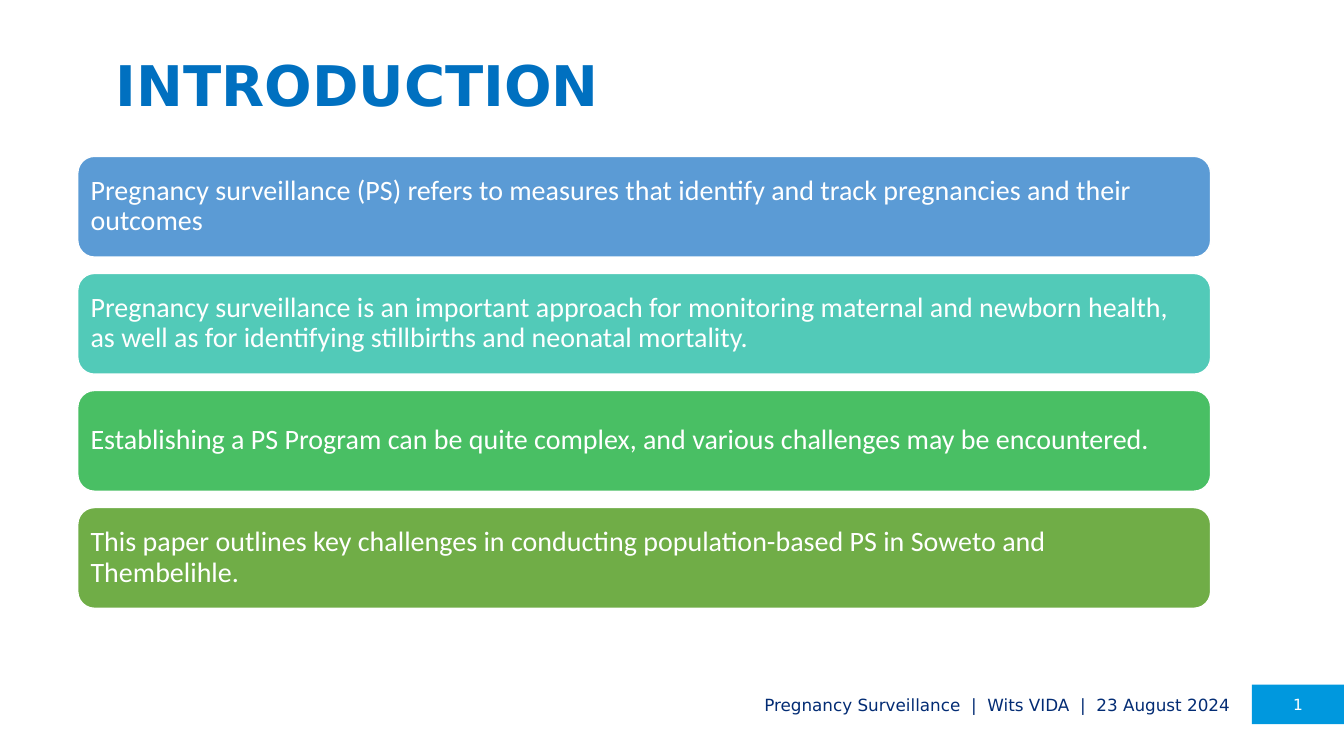
from pptx import Presentation
from pptx.dml.color import RGBColor
from pptx.enum.shapes import MSO_SHAPE
from pptx.enum.text import MSO_ANCHOR, PP_ALIGN
from pptx.util import Cm, Pt

COLORS = {
    "title": "0070C0",
    "footer": "032C74",
    "number": "0098DE",
    "white": "FFFFFF",
    "blue": "5B9BD5",
    "teal": "52CAB8",
    "green": "49BF64",
    "olive": "70AD47",
}

CARDS = [
    ("blue", "Pregnancy surveillance (PS) refers to measures that identify and track "
             "pregnancies and their outcomes"),
    ("teal", "Pregnancy surveillance is an important approach for monitoring maternal and "
             "newborn health, as well as for identifying stillbirths and neonatal mortality."),
    ("green", "Establishing a PS Program can be quite complex, and various challenges may "
              "be encountered."),
    ("olive", "This paper outlines key challenges in conducting population-based PS in "
              "Soweto and Thembelihle."),
]
CARD_TOP = 3.94
CARD_PITCH = 2.95


def rgb(name):
    return RGBColor.from_string(COLORS[name])


def write_text(shape, text, size, color, font="DejaVu Sans", align=PP_ALIGN.LEFT,
               anchor=MSO_ANCHOR.MIDDLE, inset=0, bold=False, line_spacing=1.0):
    frame = shape.text_frame
    frame.word_wrap = True
    frame.vertical_anchor = anchor
    frame.margin_left = frame.margin_right = Cm(inset)
    frame.margin_top = frame.margin_bottom = Cm(inset)
    paragraph = frame.paragraphs[0]
    paragraph.text = text
    paragraph.alignment = align
    paragraph.line_spacing = line_spacing
    paragraph.font.name = font
    paragraph.font.size = Pt(size)
    paragraph.font.bold = bold
    paragraph.font.color.rgb = rgb(color)


def add_text(slide, left, top, width, height, text, size, color, **style):
    box = slide.shapes.add_textbox(Cm(left), Cm(top), Cm(width), Cm(height))
    write_text(box, text, size, color, **style)


def add_block(slide, kind, left, top, width, height, fill):
    shape = slide.shapes.add_shape(kind, Cm(left), Cm(top), Cm(width), Cm(height))
    shape.shadow.inherit = False
    shape.fill.solid()
    shape.fill.fore_color.rgb = rgb(fill)
    shape.line.fill.background()
    return shape


def add_card(slide, top, fill, text):
    card = add_block(slide, MSO_SHAPE.ROUNDED_RECTANGLE, 1.96, top, 28.55, 2.54, fill)
    card.line.color.rgb = rgb("white")
    card.line.width = Pt(1)
    write_text(card, text, 20, "white", font="Calibri", inset=0.2, line_spacing=0.9)


def add_page_number(slide, number):
    block = add_block(slide, MSO_SHAPE.RECTANGLE, 31.55, 17.25, 2.32, 1, "number")
    write_text(block, number, 11, "white", align=PP_ALIGN.CENTER)


def main():
    presentation = Presentation()
    presentation.slide_width = Cm(33.87)
    presentation.slide_height = Cm(19.05)
    slide = presentation.slides.add_slide(presentation.slide_layouts[6])

    add_text(slide, 2.92, 1.47, 28.6, 1.14, "INTRODUCTION", 40, "title",
             anchor=MSO_ANCHOR.TOP, bold=True, line_spacing=0.9)
    for index, (fill, text) in enumerate(CARDS):
        add_card(slide, CARD_TOP + index * CARD_PITCH, fill, text)
    add_text(slide, 16.94, 17.25, 14.07, 1,
             "Pregnancy Surveillance  |  Wits VIDA  |  23 August 2024", 12, "footer",
             align=PP_ALIGN.RIGHT)
    add_page_number(slide, "1")

    presentation.save("out.pptx")


if __name__ == "__main__":
    main()
